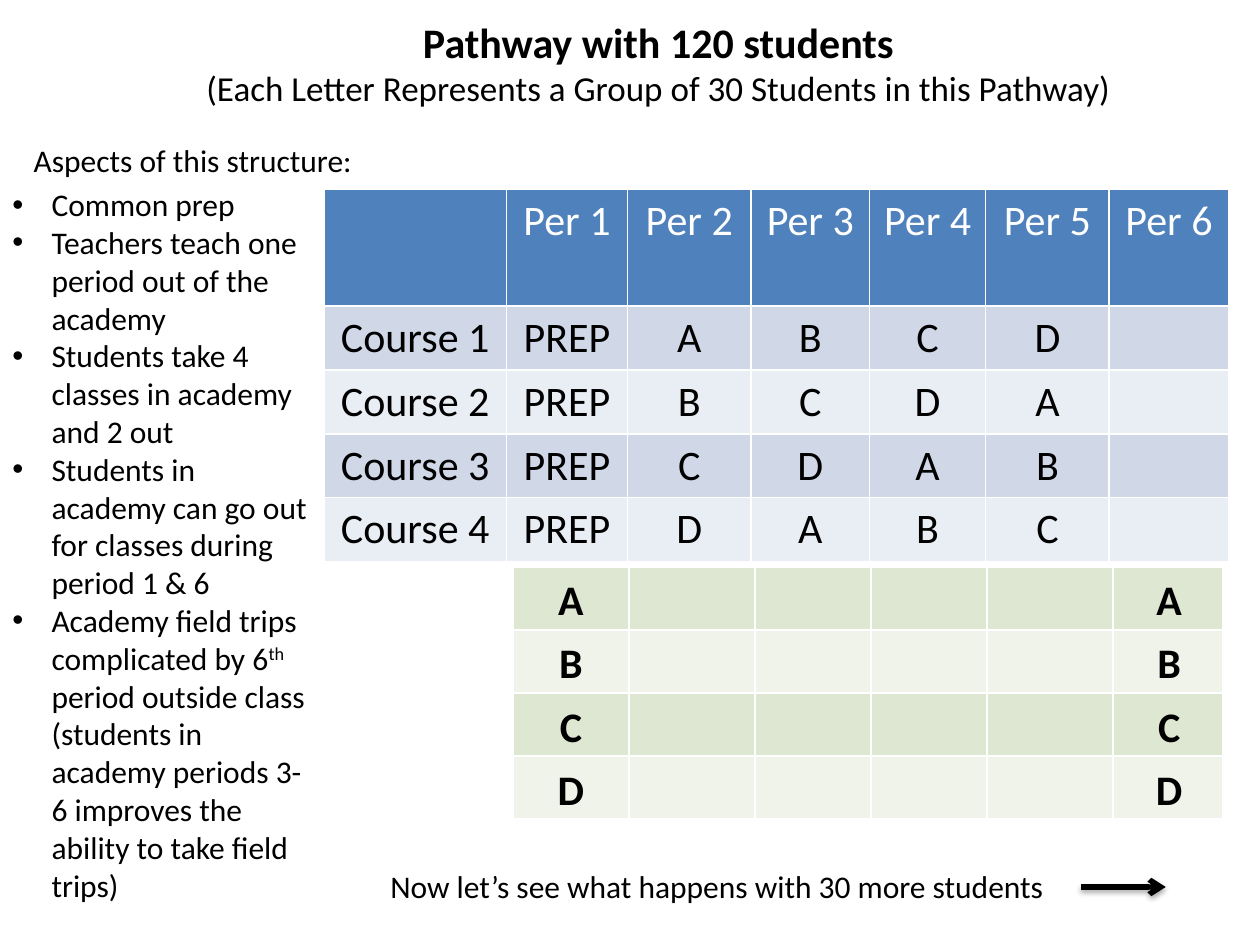
"""Build a slide showing a school timetable for four student groups."""
from lxml import etree
from pptx import Presentation, util as u
from pptx.dml.color import RGBColor
from pptx.enum import shapes, text
from pptx.oxml import parse_xml
from pptx.oxml.ns import qn

FONT = "Calibri"
NS = 'xmlns:a="http://schemas.openxmlformats.org/drawingml/2006/main"'
HUE = {
    "ink": "000000", "white": "FFFFFF", "head": "4F81BD",
    "blue": ("D0D8E8", "E9EDF4"), "green": ("DEE7D1", "EFF3EA"),
}
GROUPS = "ABCD"
TITLE = [
    ("Pathway with 120 students", 24, True),
    ("(Each Letter Represents a Group of 30 Students in this Pathway)", 20, False),
]
ASPECTS = [
    ["Common prep"],
    ["Teachers teach one period out of the academy"],
    ["Students take 4 classes in academy and 2 out"],
    ["Students in academy can go out for classes during period 1 & 6"],
    ["Academy field trips complicated by 6", "th",
     " period outside class (students in academy periods 3-6 improves"
     " the ability to take field trips)"],
]
NOTES = [
    ("Aspects of this structure:", (0.43, 2.72, 8.25, 1.02)),
    ("Now let’s see what happens with 30 more students", (7.62, 17.35, 13.74, 1.02)),
]
PLAN = [[""] + [f"Per {n}" for n in range(1, 7)]] + [
    [f"Course {n + 1}", "PREP", *GROUPS[n:], *GROUPS[:n], ""] for n in range(4)
]
PLAN_COLS = (3.68, 2.44, 2.49, 2.39, 2.34, 2.49, 2.41)
OUT_COLS = (2.34, 2.54, 2.34, 2.34, 2.54, 2.21)
OUT = [[""] * len(OUT_COLS) for _ in GROUPS]
ROW, HEAD = 1.27, 2.36
OUT_TOP, STEP = 11.43, 1.28
LABELS = (10.34, 22.4)


def style(run, size, bold=False, hue="ink"):
    font = run.font
    font.name, font.size, font.bold = FONT, u.Pt(size), bold
    font.color.rgb = RGBColor.from_string(HUE[hue])


def add_box(slide, spot):
    frame = slide.shapes.add_textbox(*map(u.Cm, spot)).text_frame
    frame.word_wrap = True
    return frame


def add_line(frame, words, size, bold=False, align=text.PP_ALIGN.LEFT, first=True):
    para = frame.paragraphs[0] if first else frame.add_paragraph()
    para.text, para.alignment = words, align
    style(para.runs[0], size, bold)


def fill_cell(cell, fill):
    cell.fill.solid()
    cell.fill.fore_color.rgb = RGBColor.from_string(fill)
    props = cell.fill._xPr
    for at, side in enumerate("LRTB"):
        props.insert(at, parse_xml(
            f'<a:ln{side} {NS} w="12700"><a:solidFill><a:srgbClr val="{HUE["white"]}"/>'
            f'</a:solidFill></a:ln{side}>'))


def add_grid(slide, left, top, cols, highs, rows, fills):
    size = map(u.Cm, (left, top, sum(cols), sum(highs)))
    grid = slide.shapes.add_table(len(rows), len(cols), *size).table
    for col, wide in zip(grid.columns, cols):
        col.width = u.Cm(wide)
    for r, (row, high, fill) in enumerate(zip(rows, highs, fills)):
        grid.rows[r].height = u.Cm(high)
        hue = "white" if fill == HUE["head"] else "ink"
        for c, words in enumerate(row):
            cell = grid.cell(r, c)
            fill_cell(cell, fill)
            if words:
                para = cell.text_frame.paragraphs[0]
                para.text, para.alignment = words, text.PP_ALIGN.CENTER
                style(para.runs[0], 24, hue=hue)


def add_aspects(slide):
    frame = add_box(slide, (0, 3.61, 6.55, 14.88))
    for i, parts in enumerate(ASPECTS):
        para = frame.paragraphs[0] if i == 0 else frame.add_paragraph()
        props = para._p.get_or_add_pPr()
        props.set("marL", str(u.Cm(0.79)))
        props.set("indent", str(-u.Cm(0.79)))
        etree.SubElement(props, qn("a:buFont"), typeface="Arial")
        etree.SubElement(props, qn("a:buChar"), char="•")
        for words in parts:
            run = para.add_run()
            run.text = words
            style(run, 18)
            if words == "th":
                run._r.get_or_add_rPr().set("baseline", "30000")


def add_arrow(slide):
    ends = map(u.Cm, (21.79, 17.88, 23.5, 17.88))
    arrow = slide.shapes.add_connector(shapes.MSO_CONNECTOR.STRAIGHT, *ends)
    arrow.line.width = u.Pt(3)
    arrow.line.color.rgb = RGBColor.from_string(HUE["ink"])
    etree.SubElement(arrow.line._get_or_add_ln(), qn("a:tailEnd"), type="arrow")
    arrow._element.spPr.append(parse_xml(
        f'<a:effectLst {NS}><a:outerShdw blurRad="40000" dist="23000" dir="5400000" '
        f'rotWithShape="0"><a:srgbClr val="{HUE["ink"]}"><a:alpha val="35000"/>'
        '</a:srgbClr></a:outerShdw></a:effectLst>'))


def main():
    deck = Presentation()
    deck.slide_width, deck.slide_height = u.Cm(25.4), u.Cm(19.05)
    slide = deck.slides.add_slide(deck.slide_layouts[6])
    mid = text.PP_ALIGN.CENTER
    add_grid(slide, 6.53, 3.81, PLAN_COLS, [HEAD] + [ROW] * 4, PLAN,
             [HUE["head"], *HUE["blue"] * 2])
    frame = add_box(slide, (3.05, 0.2, 20.45, 3.18))
    for i, (words, size, bold) in enumerate(TITLE):
        add_line(frame, words, size, bold, mid, i == 0)
    add_grid(slide, LABELS[0], OUT_TOP, OUT_COLS, [ROW] * 4, OUT, HUE["green"] * 2)
    for left in LABELS:
        for i, group in enumerate(GROUPS):
            spot = (left, OUT_TOP + i * STEP, OUT_COLS[0], ROW)
            add_line(add_box(slide, spot), group, 24, True, mid)
    for words, spot in NOTES:
        add_line(add_box(slide, spot), words, 18)
    add_aspects(slide)
    add_arrow(slide)
    deck.save("out.pptx")


if __name__ == "__main__":
    main()
